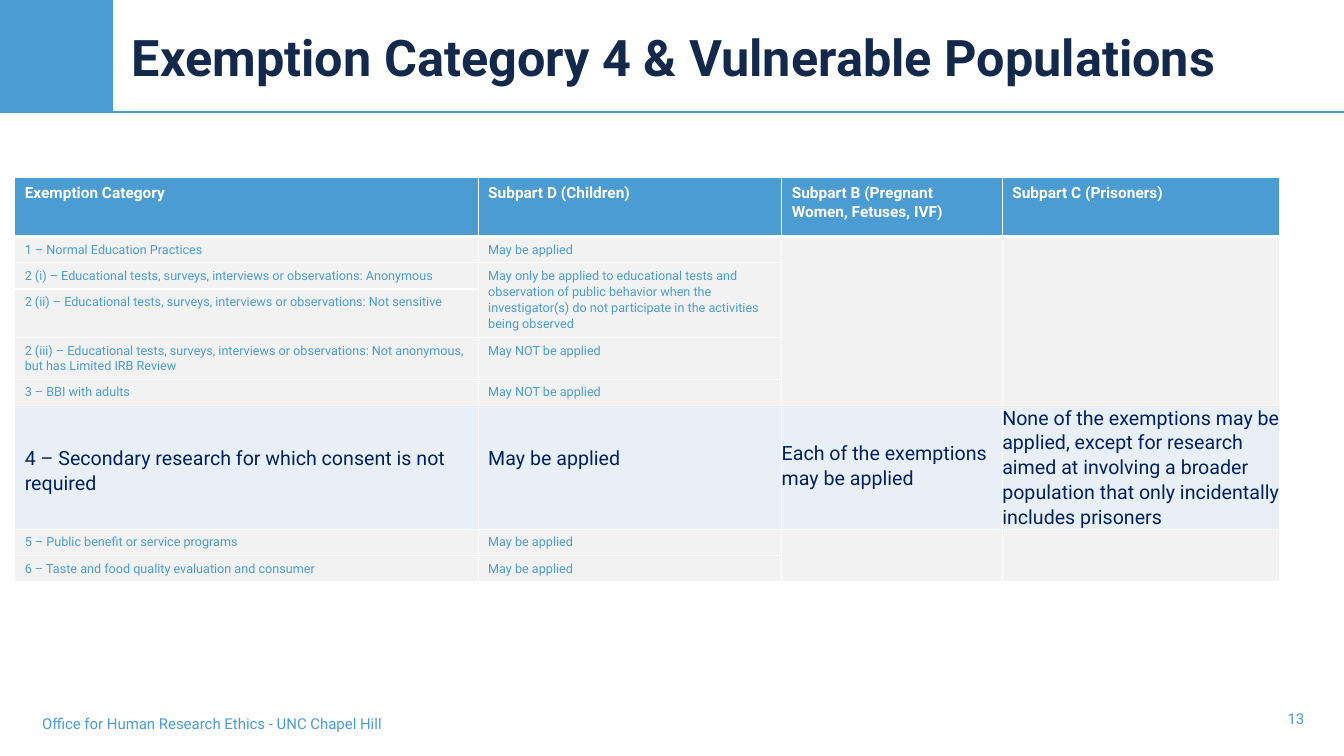
from dataclasses import dataclass

from lxml import etree
from pptx import Presentation
from pptx import util as u
from pptx.dml.color import RGBColor
from pptx.enum import shapes, text
from pptx.oxml import ns


@dataclass(frozen=True)
class Theme:
    font: str = "Roboto"
    blue: str = "4B9CD3"
    navy: str = "13294B"
    focus_text: str = "002060"
    focus_fill: str = "E9EFF7"
    grey: str = "F2F2F2"
    white: str = "FFFFFF"
    title_size: float = 36
    footer_size: float = 10.7
    header_size: float = 11
    body_size: float = 9
    focus_size: float = 14


@dataclass(frozen=True)
class Box:
    left: float
    top: float
    width: float
    height: float

    def lengths(self):
        return [u.Cm(n) for n in (self.left, self.top, self.width, self.height)]


THEME = Theme()
PAGE = Box(0, 0, 33.87, 19.05)
HEADER_ROW, FOCUS_ROW = 0, 6
COLUMN_WIDTHS = [11.68, 7.65, 5.56, 6.99]
ROW_HEIGHTS = [1.48, 0.66, 0.66, 1.22, 1.03, 0.66, 3.12, 0.66, 0.66]
FOCUS_TOPS = [1.02, 1.02, 0.89, 0]
MERGES = [(1, 2, 5), (1, 3, 5), (2, 1, 2), (7, 2, 2), (7, 3, 2)]
ROWS = [
    ["Exemption Category", "Subpart D (Children)",
     "Subpart B (Pregnant Women, Fetuses, IVF)", "Subpart C (Prisoners)"],
    ["1 – Normal Education Practices", "May be applied"],
    ["2 (i) – Educational tests, surveys, interviews or observations: Anonymous",
     "May only be applied to educational tests and observation of public behavior "
     "when the investigator(s) do not participate in the activities being observed"],
    ["2 (ii) – Educational tests, surveys, interviews or observations: Not sensitive"],
    ["2 (iii) – Educational tests, surveys, interviews or observations: "
     "Not anonymous, but has Limited IRB Review", "May NOT be applied"],
    ["3 – BBI with adults", "May NOT be applied"],
    ["4 – Secondary research for which consent is not required", "May be applied",
     "Each of the exemptions may be applied",
     "None of the exemptions may be applied, except for research aimed at involving "
     "a broader population that only incidentally includes prisoners"],
    ["5 – Public benefit or service programs", "May be applied"],
    ["6 – Taste and food quality evaluation and consumer", "May be applied"],
]


def write(frame, words, size, color, bold=False, align=text.PP_ALIGN.LEFT,
          spacing=1.0, after=0):
    para = frame.paragraphs[0]
    para.alignment = align
    para.line_spacing = spacing
    para.space_after = u.Pt(after)
    if not words:
        end = etree.SubElement(para._p, ns.qn("a:endParaRPr"))
        end.set("sz", str(int(size * 100)))
        return
    span = para.add_run()
    span.text = words
    span.font.name = THEME.font
    span.font.size = u.Pt(size)
    span.font.bold = bold
    span.font.color.rgb = RGBColor.from_string(color)


def border(cell, **widths):
    properties = cell._tc.get_or_add_tcPr()
    for index, side in enumerate("LRTB"):
        line = etree.Element(ns.qn(f"a:ln{side}"), w=str(u.Pt(widths.get(side, 1))))
        fill = etree.SubElement(line, ns.qn("a:solidFill"))
        etree.SubElement(fill, ns.qn("a:srgbClr"), val=THEME.white)
        properties.insert(index, line)


def add_heading(page, box):
    block_width = 2.85
    block = page.shapes.add_shape(
        shapes.MSO_SHAPE.RECTANGLE,
        *Box(box.left, box.top, block_width, box.height).lengths())
    block.shadow.inherit = False
    block.fill.solid()
    block.fill.fore_color.rgb = RGBColor.from_string(THEME.blue)
    block.line.fill.background()

    bottom = u.Cm(box.top + box.height)
    rule = page.shapes.add_connector(
        shapes.MSO_CONNECTOR.STRAIGHT,
        u.Cm(box.left), bottom, u.Cm(box.left + box.width), bottom)
    rule.line.color.rgb = RGBColor.from_string(THEME.blue)
    rule.line.width = u.Pt(1)
    etree.SubElement(rule._element.spPr, ns.qn("a:effectLst"))

    title = page.shapes.title
    title.left, title.top, title.width, title.height = Box(
        box.left + 3.07, box.top, 30.02, box.height).lengths()
    frame = title.text_frame
    frame.word_wrap = True
    frame.auto_size = text.MSO_AUTO_SIZE.NONE
    frame.vertical_anchor = text.MSO_ANCHOR.MIDDLE
    write(frame, "Exemption Category 4 & Vulnerable Populations",
          THEME.title_size, THEME.navy, bold=True)


def fill_cell(cell, words, row, column):
    size, color, fill = THEME.body_size, THEME.blue, THEME.grey
    if row == HEADER_ROW:
        size, color, fill = THEME.header_size, THEME.white, THEME.blue
    elif row == FOCUS_ROW:
        size, color, fill = THEME.focus_size, THEME.focus_text, THEME.focus_fill
        cell.margin_top = u.Cm(FOCUS_TOPS[column])
        if column >= 2:
            cell.margin_left = cell.margin_right = cell.margin_bottom = 0
    cell.fill.solid()
    cell.fill.fore_color.rgb = RGBColor.from_string(fill)
    border(cell, T=3 if row == HEADER_ROW + 1 else 1, B=3 if row == HEADER_ROW else 1)
    write(cell.text_frame, words, size, color, bold=row == HEADER_ROW,
          spacing=1.07, after=8)


def add_exemptions(page, box):
    table = page.shapes.add_table(
        len(ROWS), len(COLUMN_WIDTHS), *box.lengths()).table
    table.horz_banding = False
    for column, width in zip(table.columns, COLUMN_WIDTHS):
        column.width = u.Cm(width)
    for row, height in zip(table.rows, ROW_HEIGHTS):
        row.height = u.Cm(height)
    for row, entries in enumerate(ROWS):
        for column in range(len(COLUMN_WIDTHS)):
            words = entries[column] if column < len(entries) else ""
            fill_cell(table.cell(row, column), words, row, column)
    for row, column, count in MERGES:
        table.cell(row, column).merge(table.cell(row + count - 1, column))


def add_footer(page, box):
    number_width = 1.42
    parts = [
        ("Office for Human Research Ethics - UNC Chapel Hill", box.left, 16.54,
         text.PP_ALIGN.LEFT, text.MSO_ANCHOR.MIDDLE),
        ("13", box.left + box.width - number_width, number_width,
         text.PP_ALIGN.RIGHT, text.MSO_ANCHOR.TOP),
    ]
    for words, left, width, align, anchor in parts:
        label = page.shapes.add_textbox(*Box(left, box.top, width, box.height).lengths())
        label.text_frame.word_wrap = True
        label.text_frame.vertical_anchor = anchor
        write(label.text_frame, words, THEME.footer_size, THEME.blue, align=align)


def main():
    deck = Presentation()
    deck.slide_width, deck.slide_height = PAGE.lengths()[2:]
    page = deck.slides.add_slide(deck.slide_layouts[5])
    add_heading(page, Box(0, 0, PAGE.width, 2.82))
    add_exemptions(page, Box(0.37, 4.48, sum(COLUMN_WIDTHS), sum(ROW_HEIGHTS)))
    add_footer(page, Box(0.81, 17.75, 32.31, 0.97))
    deck.save("out.pptx")


if __name__ == "__main__":
    main()
